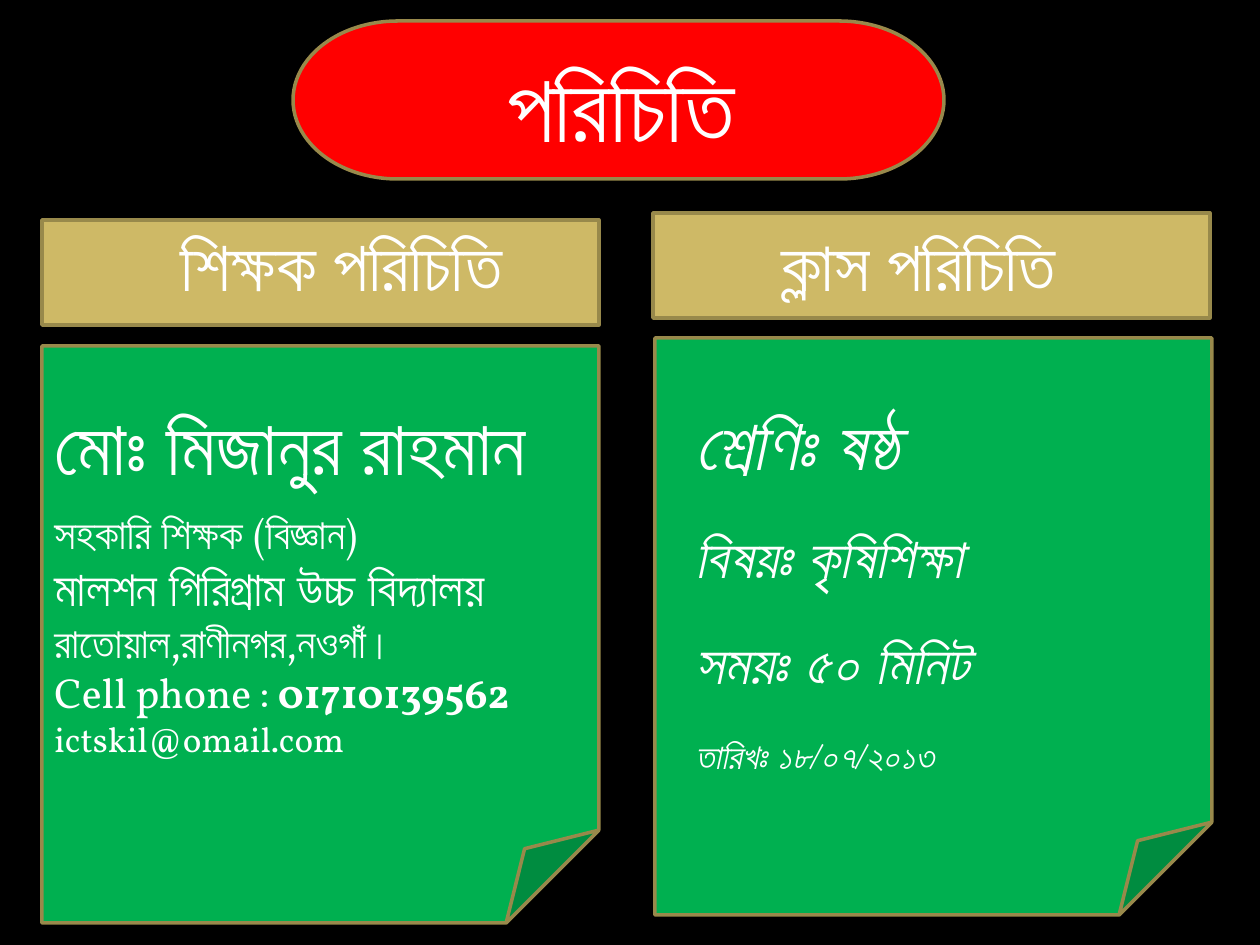
from pptx import Presentation
from pptx.dml.color import RGBColor
from pptx.enum.shapes import MSO_SHAPE as SHAPE
from pptx.enum.text import MSO_ANCHOR as ANCHOR, MSO_AUTO_SIZE as AUTO, PP_ALIGN as ALIGN
from pptx.util import Emu, Pt

PX_PER_INCH = 126
COLORS = {
    "background": "000000",
    "text": "FFFFFF",
    "banner": "FF0000",
    "heading": "CEB966",
    "card": "00B050",
    "outline": "98894B",
}
TEXT_FONT = "Vollkorn"
TITLE_FONT = "Calibri"


def px(n):
    return Emu(round(n * 914400 / PX_PER_INCH))


def rgb(name):
    return RGBColor.from_string(COLORS[name])


def add_box(slide, kind, box, fill):
    sp = slide.shapes.add_shape(kind, *map(px, box))
    sp.shadow.inherit = False
    sp.fill.solid()
    sp.fill.fore_color.rgb = rgb(fill)
    sp.line.color.rgb = rgb("outline")
    sp.line.width = Pt(2)


def format_paragraph(p, size, font=TEXT_FONT, bold=False, italic=False, align=ALIGN.LEFT):
    p.alignment = align
    p.font.size = Pt(size)
    p.font.name = font
    p.font.bold = bold
    p.font.italic = italic
    p.font.color.rgb = rgb("text")


def add_text(slide, box, lines, gap=0, anchor=ANCHOR.TOP, **style):
    tf = slide.shapes.add_textbox(*map(px, box)).text_frame
    tf.word_wrap = True
    tf.vertical_anchor = anchor
    for i, (text, size) in enumerate(lines):
        p = tf.paragraphs[0] if i == 0 else tf.add_paragraph()
        p.text = text
        p.space_before = Pt(gap if i else 0)
        format_paragraph(p, size, **style)
    return tf


def add_banner(slide, box, text):
    x, y, w, h = box
    add_box(slide, SHAPE.FLOWCHART_TERMINATOR, box, "banner")
    title = slide.shapes.title
    title.left, title.top, title.width, title.height = map(px, (x + 148, y + 21, 360, 127))
    tf = title.text_frame
    tf.text = text
    tf.word_wrap = False
    tf.auto_size = AUTO.NONE
    tf.vertical_anchor = ANCHOR.TOP
    format_paragraph(tf.paragraphs[0], 54, TITLE_FONT, bold=True, align=ALIGN.CENTER)
    slide.shapes._spTree.append(title._element)


def add_panel(slide, box, heading, heading_shift, card_shift):
    x, y, w, h = box
    dx, dy = heading_shift
    cx, cy = card_shift
    add_box(slide, SHAPE.RECTANGLE, (x, y, w, 105), "heading")
    add_text(slide, (x + dx, y + dy, w, 103), [(heading, 40)],
             anchor=ANCHOR.MIDDLE, align=ALIGN.CENTER)
    add_box(slide, SHAPE.FOLDED_CORNER, (x + cx, y + cy, w, h - cy), "card")


def add_teacher(slide, box):
    x, y, w, h = box
    add_panel(slide, box, "শিক্ষক পরিচিতি", (21, -8), (0, 126))
    add_text(slide, (x, y + 172, 525, 106), [("মোঃ মিজানুর রাহমান", 44)])
    tf = add_text(slide, (x, y + 281, 525, 305), [
        ("সহকারি শিক্ষক (বিজ্ঞান)", 24),
        ("মালশন গিরিগ্রাম উচ্চ বিদ্যালয়", 28),
        ("রাতোয়াল,রাণীনগর,নওগাঁ।", 24),
        ("Cell phone : ", 24),
        ("ictskil@omail.com", 20),
    ])
    r = tf.paragraphs[3].add_run()
    r.text = "01710139562"
    r.font.bold = True


def add_class(slide, box):
    x, y, w, h = box
    add_panel(slide, box, "ক্লাস পরিচিতি", (-13, -1), (2, 125))
    add_text(slide, (x + 30, y + 181, 504, 428), [
        ("শ্রেণিঃ ষষ্ঠ", 40),
        ("বিষয়ঃ কৃষিশিক্ষা", 32),
        ("সময়ঃ ৫০ মিনিট", 32),
        ("তারিখঃ ১৮/০৭/২০১৩", 20),
    ], gap=22, italic=True)


def main():
    prs = Presentation()
    prs.slide_width, prs.slide_height = px(1260), px(945)
    slide = prs.slides.add_slide(prs.slide_layouts[5])
    slide.background.fill.solid()
    slide.background.fill.fore_color.rgb = rgb("background")
    add_banner(slide, (293, 21, 651, 158), "পরিচিতি")
    add_teacher(slide, (42, 220, 557, 703))
    add_class(slide, (653, 213, 557, 702))
    prs.save("out.pptx")


if __name__ == "__main__":
    main()
